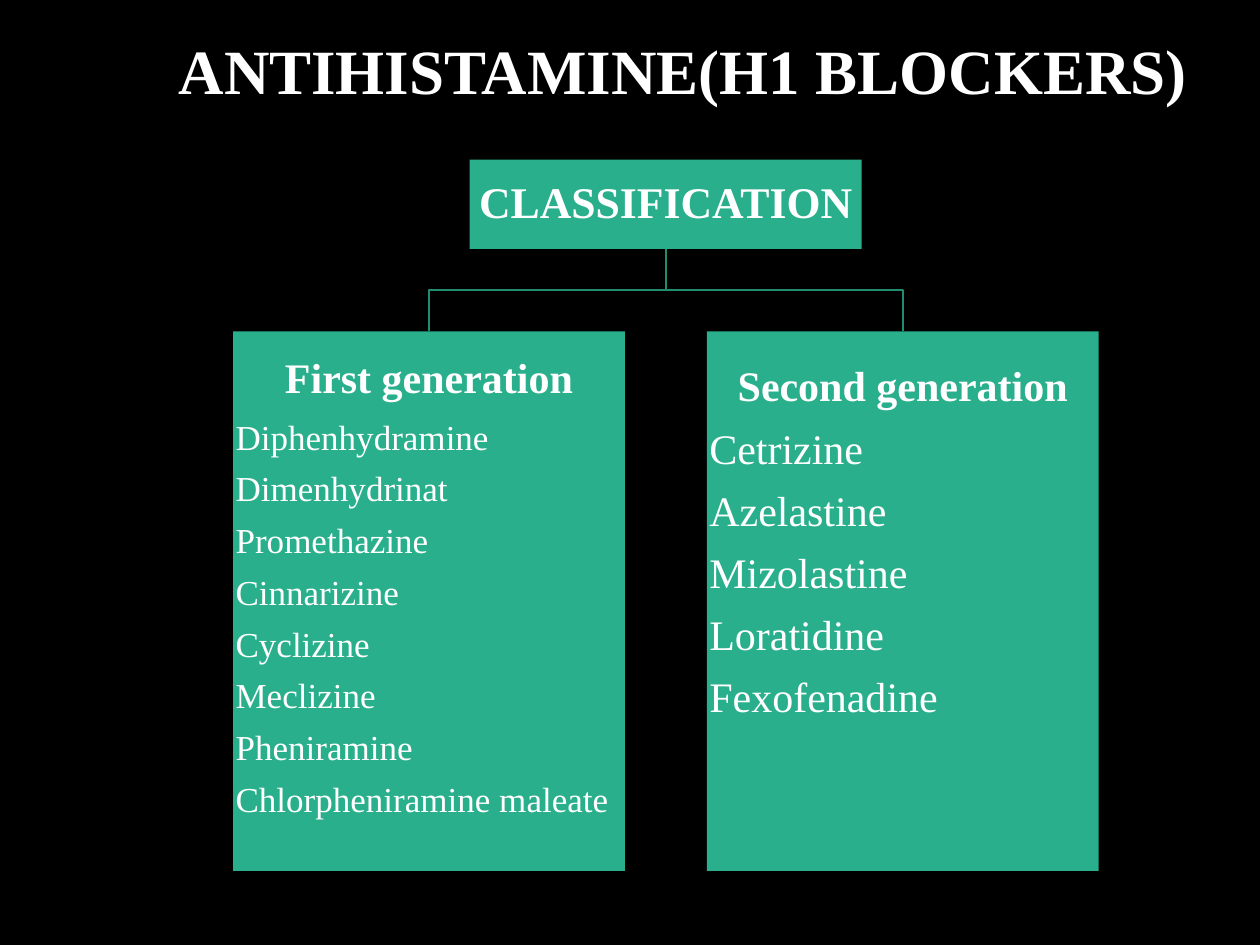
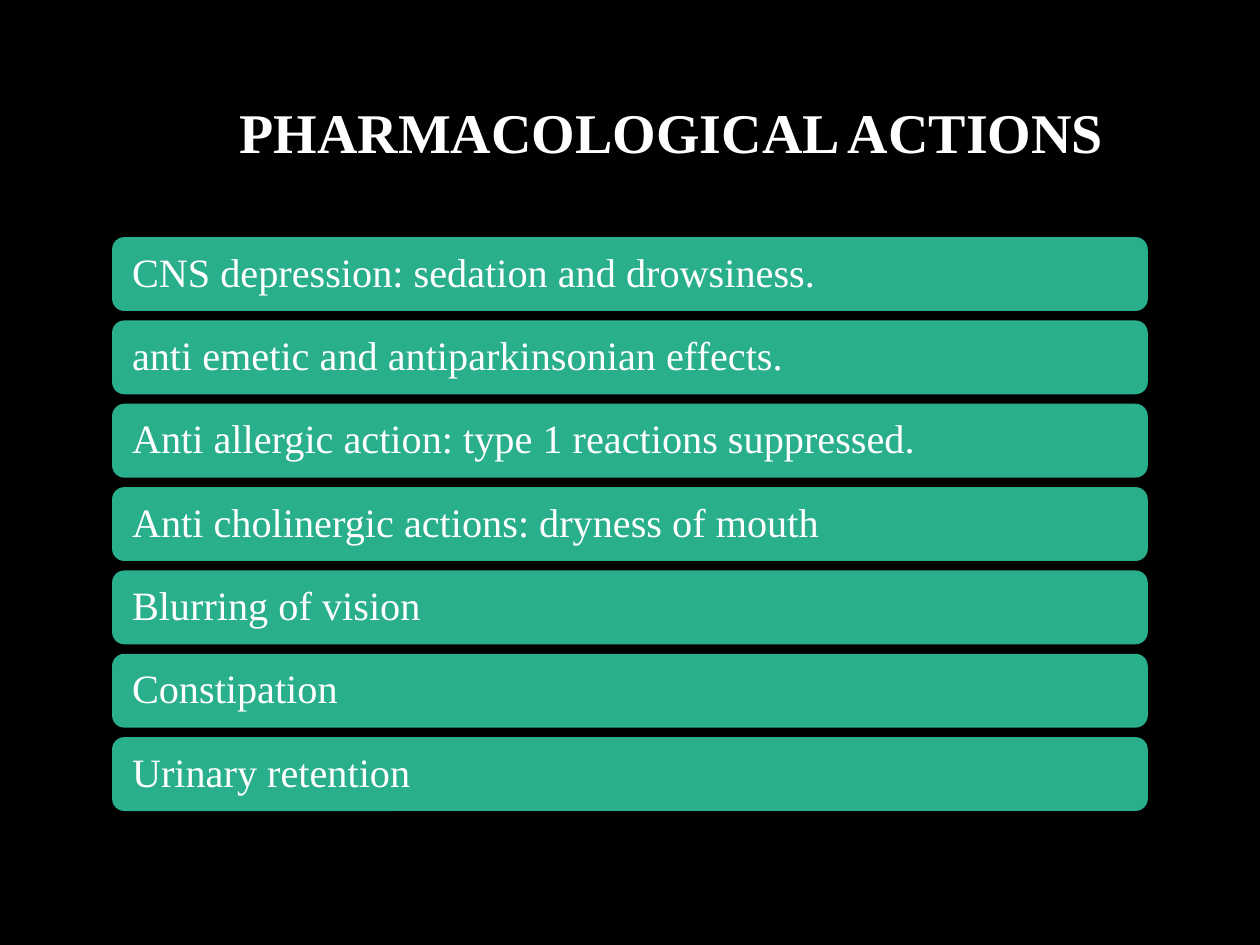
import dataclasses
import pptx
import pptx.util
import pptx.dml.color
import pptx.enum.shapes
import pptx.enum.text

Cm = pptx.util.Cm
Pt = pptx.util.Pt
Rgb = pptx.dml.color.RGBColor
Align = pptx.enum.text.PP_ALIGN
Anchor = pptx.enum.text.MSO_ANCHOR
Kind = pptx.enum.shapes.MSO_SHAPE


@dataclasses.dataclass(frozen=True)
class Theme:
    back: Rgb = Rgb(0x00, 0x00, 0x00)
    fill: Rgb = Rgb(0x29, 0xAF, 0x8C)
    line: Rgb = Rgb(0x21, 0x8C, 0x70)
    ink: Rgb = Rgb(0xFF, 0xFF, 0xFF)
    font: str = "Times New Roman"
    title: int = 36
    head: int = 32
    root: int = 25
    group: int = 24
    drug: int = 20
    bar: int = 23


theme = Theme()


def write(shape, text, size, bold=False, align=Align.LEFT, lead=0.9, after=0,
          anchor=Anchor.MIDDLE, side=0.25, top=0.13):
    frame = shape.text_frame
    frame.word_wrap = True
    frame.vertical_anchor = anchor
    frame.margin_left = frame.margin_right = Cm(side)
    frame.margin_top = frame.margin_bottom = Cm(top)
    para = frame.add_paragraph() if frame.text else frame.paragraphs[0]
    para.alignment = align
    para.line_spacing = lead
    para.space_after = Pt(after)
    run = para.add_run()
    run.text = text
    run.font.name = theme.font
    run.font.size = Pt(size)
    run.font.bold = bold
    run.font.color.rgb = theme.ink


def block(slide, kind, left, top, width, height):
    shape = slide.shapes.add_shape(kind, Cm(left), Cm(top), Cm(width), Cm(height))
    shape.shadow.inherit = False
    shape.fill.solid()
    shape.fill.fore_color.rgb = theme.fill
    shape.line.fill.background()
    return shape


deck = pptx.Presentation()
deck.slide_width = Cm(25.4)
deck.slide_height = Cm(19.05)
chart, acts = [deck.slides.add_slide(deck.slide_layouts[6]) for _ in range(2)]
for slide in (chart, acts):
    slide.background.fill.solid()
    slide.background.fill.fore_color.rgb = theme.back

wide = 7.9
root_x, root_y, root_h = 9.47, 3.22, 1.8
panel_y, panel_h = 6.68, 10.88
groups = [
    (4.7, 0.53, theme.drug, "First generation",
     ["Diphenhydramine", "Dimenhydrinat", "Promethazine", "Cinnarizine",
      "Cyclizine", "Meclizine", "Pheniramine", "Chlorpheniramine maleate"]),
    (14.25, 0.69, theme.group, "Second generation",
     ["Cetrizine", "Azelastine", "Mizolastine", "Loratidine", "Fexofenadine"]),
]

stem = root_x + wide / 2
base = root_y + root_h
fork = (base + panel_y) / 2
for left, *_ in groups:
    mid = left + wide / 2
    pen = chart.shapes.build_freeform(Cm(stem), Cm(base))
    pen.add_line_segments(
        [(Cm(stem), Cm(fork)), (Cm(mid), Cm(fork)), (Cm(mid), Cm(panel_y))],
        close=False)
    branch = pen.convert_to_shape()
    branch.shadow.inherit = False
    branch.fill.background()
    branch.line.color.rgb = theme.line
    branch.line.width = Pt(1)

root = block(chart, Kind.RECTANGLE, root_x, root_y, wide, root_h)
write(root, "CLASSIFICATION", theme.root, bold=True, align=Align.CENTER,
      side=0.05, top=0.05)

for left, inset, size, name, drugs in groups:
    panel = block(chart, Kind.RECTANGLE, left, panel_y, wide, panel_h)
    place = dict(anchor=Anchor.TOP, side=0.05, top=inset)
    write(panel, name, theme.group, bold=True, align=Align.CENTER,
          after=theme.group * 0.4, **place)
    for drug in drugs:
        write(panel, drug, size, after=size * 0.4, **place)

title = chart.shapes.add_textbox(Cm(3.35), Cm(0.5), Cm(21.04), Cm(1.8))
write(title, "ANTIHISTAMINE(H1 BLOCKERS)", theme.title, bold=True, lead=1,
      anchor=Anchor.TOP)

head = acts.shapes.add_textbox(Cm(3.1), Cm(1.9), Cm(20.88), Cm(1.65))
write(head, "PHARMACOLOGICAL ACTIONS", theme.head, bold=True, align=Align.CENTER)

effects = [
    "CNS depression: sedation and drowsiness.",
    "anti emetic and antiparkinsonian effects.",
    "Anti allergic action: type 1 reactions suppressed.",
    "Anti cholinergic actions: dryness of mouth",
    "Blurring of vision",
    "Constipation",
    "Urinary retention",
]
for row, effect in enumerate(effects):
    bar = block(acts, Kind.ROUNDED_RECTANGLE, 2.26, 4.78 + row * 1.68, 20.88, 1.49)
    write(bar, effect, theme.bar, side=0.33)

deck.save("out.pptx")
